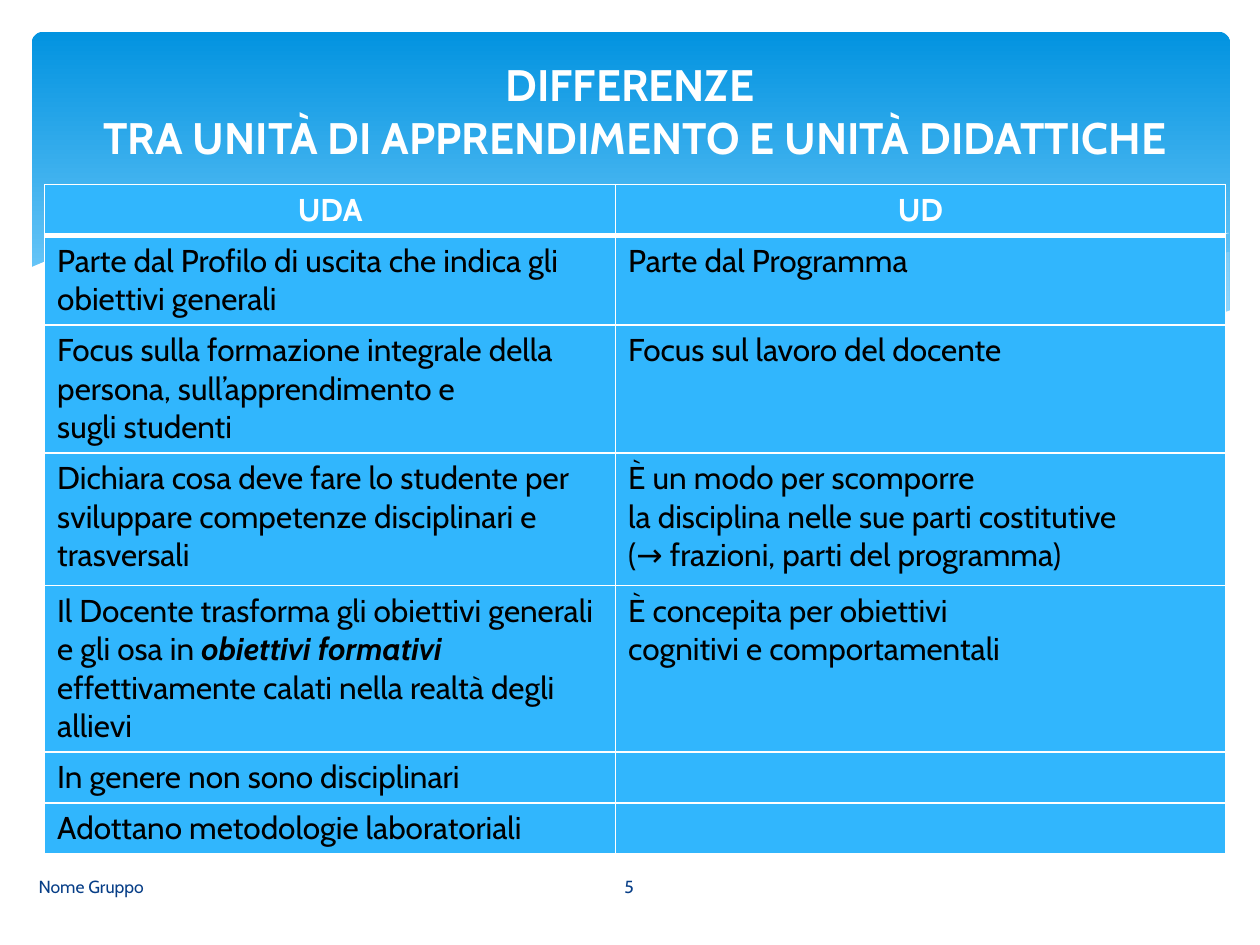
"""Build a slide comparing learning units (UDA) with teaching units (UD)."""
from lxml import etree
from pptx import Presentation
from pptx.dml.color import RGBColor
from pptx.enum.shapes import MSO_SHAPE
from pptx.enum.text import MSO_ANCHOR, PP_ALIGN
from pptx.oxml.ns import qn
from pptx.util import Cm, Pt

COLORS = {"white": "FFFFFF", "black": "000000", "cell": "31B6FD", "footer": "073E87",
          "panel_top": "0293E0", "panel_bottom": "83D3FE", "wave": "C6E7FC"}
FONT = "Cabin"

TITLE = "DIFFERENZE\n TRA UNITÀ DI APPRENDIMENTO E UNITÀ DIDATTICHE"
FOOTER = "Nome Gruppo"
PAGE = "5"
HEADINGS = ["UDA", "UD"]
DIFFERENCES = [
    (["Parte dal Profilo di uscita che indica gli obiettivi generali"],
     ["Parte dal Programma"]),
    (["Focus sulla formazione integrale della persona, sull’apprendimento e",
      "sugli studenti"],
     ["Focus sul lavoro del docente"]),
    (["Dichiara cosa deve fare lo studente per sviluppare competenze disciplinari e trasversali"],
     ["È un modo per scomporre", "la disciplina nelle sue parti costitutive",
      "(→ frazioni, parti del programma)"]),
    ([[("Il Docente trasforma gli obiettivi generali e gli osa in ", False),
       ("obiettivi formativi ", True),
       ("effettivamente calati nella realtà degli allievi", False)]],
     ["È concepita per obiettivi", "cognitivi e comportamentali"]),
    (["In genere non sono disciplinari"], []),
    (["Adottano metodologie laboratoriali"], []),
]
COLUMN_WIDTHS = [11.51, 12.29]
ROW_HEIGHTS = [1.0, 1.75, 2.52, 2.67, 3.25, 1.0, 1.0]

RIGHT_WAVE = [
    (24.77, 5.08), (23.75, 5.26), (22.63, 5.49), (21.87, 5.66), (19.79, 6.15),
    (17.93, 6.53), (16.79, 6.73), (17.91, 6.88), (19.23, 7.01), (20.4, 7.06),
    (21.69, 7.01), (22.78, 6.86), (23.75, 6.65), (24.79, 6.27), (24.79, 5.08)]
MIDDLE_WAVE = [
    (22.68, 6.93), (21.26, 6.73), (19.69, 6.45), (17.93, 6.1), (15.98, 5.64),
    (14.45, 5.28), (13.06, 5.03), (11.81, 4.85), (10.67, 4.75), (9.17, 4.7),
    (7.95, 4.78), (7.26, 4.85), (8.69, 5.05), (10.26, 5.36), (11.4, 5.64),
    (13.46, 6.1), (15.27, 6.48), (17.27, 6.81), (19, 7.01), (20.5, 7.06), (21.77, 7.04)]
FALLING_CURVE = [
    (7.85, 4.95), (8.74, 4.83), (10.19, 4.75), (11.91, 4.8), (13.54, 4.93),
    (15.44, 5.18), (17.65, 5.56), (20.19, 6.12), (23.04, 6.91)]
RISING_CURVE = [
    (15.57, 6.53), (17.65, 5.97), (19.71, 5.49), (22, 5.05), (23.47, 4.83), (24.77, 4.7)]
PAGE_EDGE = [
    (24.82, 6.25), (23.88, 6.58), (22.83, 6.83), (21.59, 6.99), (20.55, 7.04),
    (18.9, 6.96), (16.97, 6.73), (14.71, 6.35), (12.78, 5.92), (11.35, 5.59),
    (9.27, 5.13), (7.42, 4.83), (5.84, 4.7), (4.5, 4.67), (3.02, 4.75), (1.93, 4.95),
    (1.17, 5.16), (0.58, 5.41), (0.58, 8.36), (24.82, 8.36)]


def rgb(name):
    return RGBColor.from_string(COLORS[name])


def write(frame, paragraphs, size=18, color="black", bold=False,
          align=PP_ALIGN.LEFT, anchor=MSO_ANCHOR.TOP):
    frame.word_wrap = True
    frame.vertical_anchor = anchor
    for index, content in enumerate(paragraphs):
        paragraph = frame.add_paragraph() if index else frame.paragraphs[0]
        paragraph.alignment = align
        pieces = [(content, False)] if isinstance(content, str) else content
        for text, emphasis in pieces:
            for number, line in enumerate(text.split("\n")):
                if number:
                    paragraph.add_line_break()
                run = paragraph.add_run()
                run.text = line
                run.font.name = FONT
                run.font.size = Pt(size)
                run.font.bold = bold or emphasis
                run.font.italic = emphasis
                run.font.color.rgb = rgb(color)


def label(slide, left, top, width, height, text, **style):
    box = slide.shapes.add_textbox(Cm(left), Cm(top), Cm(width), Cm(height))
    write(box.text_frame, [text], anchor=MSO_ANCHOR.MIDDLE, **style)


def draw_panel(slide):
    panel = slide.shapes.add_shape(
        MSO_SHAPE.ROUNDED_RECTANGLE, Cm(0.64), Cm(0.64), Cm(24.16), Cm(6.86))
    panel.adjustments[0] = 0.034
    panel.shadow.inherit = False
    panel.line.fill.background()
    panel.fill.gradient()
    panel.fill.gradient_angle = 270
    stops = [("panel_top", 0), ("panel_bottom", 0.9)]
    for stop, (color, position) in zip(panel.fill.gradient_stops, stops):
        stop.color.rgb = rgb(color)
        stop.position = position


def draw_outline(slide, points, fill=None, opacity=100):
    (left, top), *rest = points
    builder = slide.shapes.build_freeform(Cm(left), Cm(top))
    builder.add_line_segments([(Cm(x), Cm(y)) for x, y in rest], close=fill is not None)
    outline = builder.convert_to_shape()
    outline.shadow.inherit = False
    if fill is None:
        outline.fill.background()
        outline.line.color.rgb = rgb("white")
        outline.line.width = Pt(0.25)
        return
    outline.line.fill.background()
    outline.fill.solid()
    outline.fill.fore_color.rgb = rgb(fill)
    if opacity < 100:
        color = outline.fill._xPr.find(f".//{qn('a:srgbClr')}")
        etree.SubElement(color, qn("a:alpha"), val=str(opacity * 1000))


def set_borders(cell, **widths):
    properties = cell._tc.get_or_add_tcPr()
    for index, side in enumerate("LRTB"):
        line = etree.Element(qn(f"a:ln{side}"), w=str(Pt(widths.get(side, 1))))
        solid = etree.SubElement(line, qn("a:solidFill"))
        etree.SubElement(solid, qn("a:srgbClr"), val=COLORS["white"])
        properties.insert(index, line)


def draw_table(slide):
    rows = [[[heading] for heading in HEADINGS], *DIFFERENCES]
    table = slide.shapes.add_table(
        len(rows), len(HEADINGS), Cm(0.9), Cm(3.72),
        Cm(sum(COLUMN_WIDTHS)), Cm(sum(ROW_HEIGHTS))).table
    for column, width in zip(table.columns, COLUMN_WIDTHS):
        column.width = Cm(width)
    for row, height in zip(table.rows, ROW_HEIGHTS):
        row.height = Cm(height)
    heading_style = {"color": "white", "bold": True, "align": PP_ALIGN.CENTER}
    for r, row in enumerate(rows):
        for c, paragraphs in enumerate(row):
            cell = table.cell(r, c)
            cell.fill.solid()
            cell.fill.fore_color.rgb = rgb("cell")
            set_borders(cell, T=3 if r == 1 else 1, B=3 if r == 0 else 1)
            write(cell.text_frame, paragraphs, **({} if r else heading_style))


def main():
    deck = Presentation()
    deck.slide_width, deck.slide_height = Cm(25.4), Cm(19.05)
    slide = deck.slides.add_slide(deck.slide_layouts[6])
    draw_panel(slide)
    draw_outline(slide, RIGHT_WAVE, fill="wave", opacity=29)
    draw_outline(slide, MIDDLE_WAVE, fill="wave", opacity=40)
    draw_outline(slide, FALLING_CURVE)
    draw_outline(slide, RISING_CURVE)
    draw_outline(slide, PAGE_EDGE, fill="white")
    draw_table(slide)
    label(slide, 1.27, 0.94, 22.86, 2.59, TITLE, size=25.2, color="white", bold=True,
          align=PP_ALIGN.CENTER)
    label(slide, 0.53, 17.37, 10.52, 1.02, FOOTER, size=10, color="footer")
    label(slide, 11.07, 17.37, 3.23, 1.02, PAGE, size=10, color="footer",
          align=PP_ALIGN.CENTER)
    deck.save("out.pptx")


if __name__ == "__main__":
    main()
